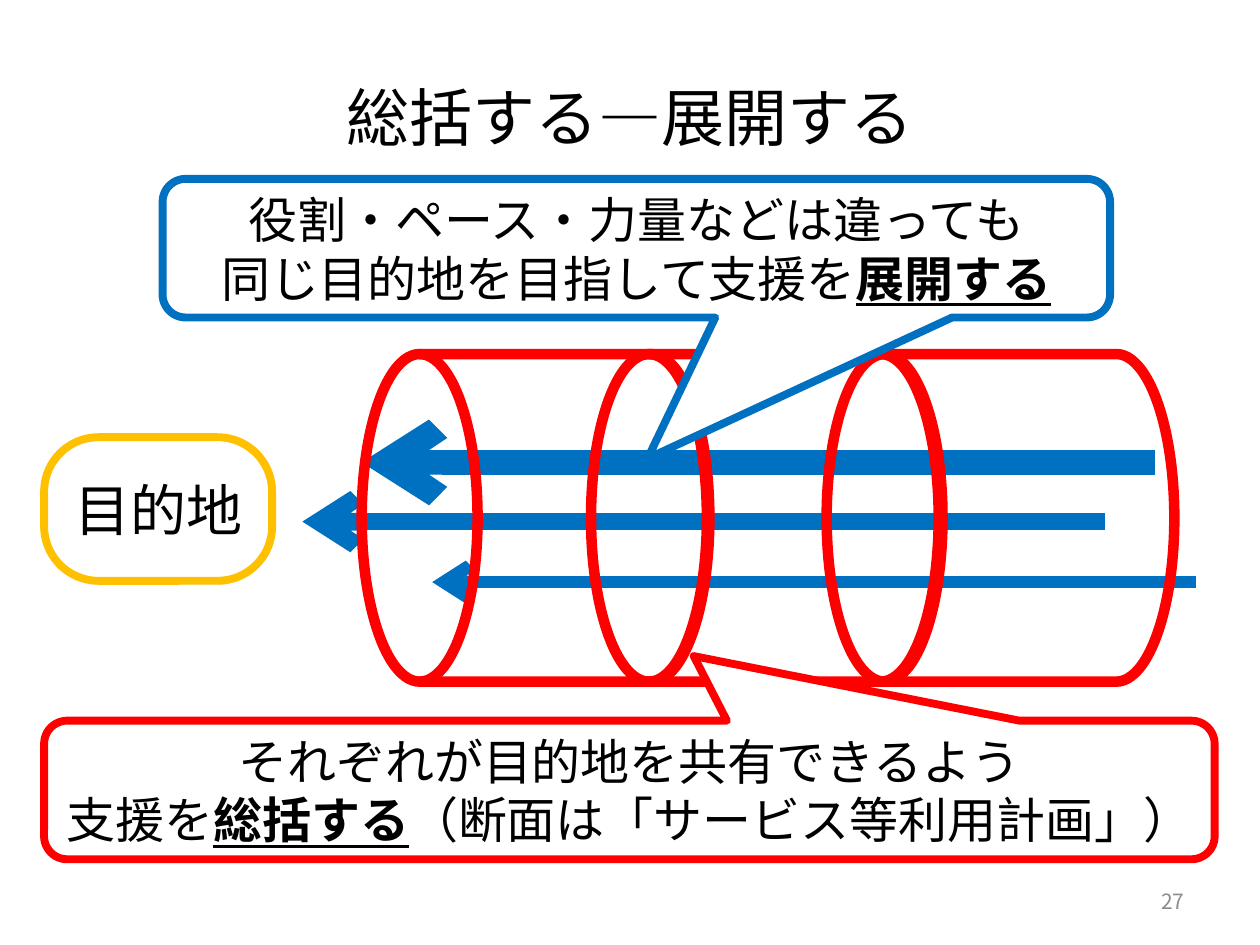
from lxml.etree import SubElement
from pptx import Presentation
from pptx.dml.color import RGBColor
from pptx.enum.shapes import MSO_CONNECTOR, MSO_SHAPE
from pptx.enum.text import MSO_ANCHOR, PP_ALIGN
from pptx.oxml.ns import qn
from pptx.util import Inches, Pt

FONT = "Noto Sans CJK JP"
RED, BLUE, GOLD, WHITE = "FF0000", "0070C0", "FFC000", "FFFFFF"

deck = Presentation()
deck.slide_width, deck.slide_height = Inches(10), Inches(7.5)
page = deck.slides.add_slide(deck.slide_layouts[5])

# Grid of 100 columns by 75 rows
column, row = deck.slide_width / 100, deck.slide_height / 75


def grid(left, top, width, height):
    return [round(n * unit) for n, unit in
            zip((left, top, width, height), (column, row, column, row))]


def write(box, *lines, size, color="000000", align=PP_ALIGN.CENTER):
    """Each line is a list of spans; every second span is bold and underlined."""
    frame = box.text_frame
    frame.word_wrap = True
    frame.vertical_anchor = MSO_ANCHOR.MIDDLE
    for number, line in enumerate(lines):
        para = frame.add_paragraph() if number else frame.paragraphs[0]
        para.alignment = align
        for position, text in enumerate(line):
            span = para.add_run()
            span.text = text
            font = span.font
            font.name, font.size = FONT, Pt(size)
            font.color.rgb = RGBColor.from_string(color)
            font.bold = font.underline = position % 2 == 1
            SubElement(span._r.get_or_add_rPr(), qn("a:ea"), typeface=FONT)


# Title
title = page.shapes.title
title.left, title.top, title.width, title.height = grid(5, 3, 90, 12.5)
write(title, ["総括する―展開する"], size=36)

# Destination
goal = page.shapes.add_shape(MSO_SHAPE.ROUNDED_RECTANGLE, *grid(3.5, 34.7, 18.1, 11.4))
goal.adjustments[0] = 0.38
write(goal, ["目的地"], size=32)

# Arrows towards the destination
for start, end, level, weight in [(91.7, 28.7, 36.7, 14),
                                  (87.7, 24, 41.4, 10),
                                  (94.9, 34.3, 46.2, 7)]:
    arrow = page.shapes.add_connector(
        MSO_CONNECTOR.STRAIGHT, *grid(start, level, end, level))
    arrow.line.color.rgb = RGBColor.from_string(BLUE)
    arrow.line.width = Pt(weight)
    SubElement(arrow.line._get_or_add_ln(), qn("a:tailEnd"), type="arrow")
    SubElement(arrow._element.spPr, qn("a:effectLst"))

# Pipe of three drums, the rightmost at the back
for left in (65.6, 46.9, 28.7):
    drum = page.shapes.add_shape(
        MSO_SHAPE.FLOWCHART_DIRECT_ACCESS_STORAGE, *grid(left, 28.1, 27.6, 26))
    drum.rotation = 180
    drum.shadow.inherit = False
    drum.fill.background()
    drum.line.color.rgb = RGBColor.from_string(RED)
    drum.line.width = Pt(6)

# Callouts
boxes = [(goal, GOLD)]
for place, pointer, color, lines in [
    ((12.9, 14.2, 75.2, 11), (0.012, 1.517), BLUE,
     [["役割・ペース・力量などは違っても"],
      ["同じ目的地を目指して支援を", "展開する"]]),
    ((3.5, 57.2, 92.9, 11), (0.055, -0.966), RED,
     [["それぞれが目的地を共有できるよう"],
      ["支援を", "総括する", "（断面は「サービス等利用計画」）"]]),
]:
    callout = page.shapes.add_shape(MSO_SHAPE.ROUNDED_RECTANGULAR_CALLOUT, *grid(*place))
    callout.adjustments[0], callout.adjustments[1] = pointer
    write(callout, *lines, size=28)
    boxes.append((callout, color))

# White boxes with coloured outlines
for box, color in boxes:
    box.shadow.inherit = False
    box.fill.solid()
    box.fill.fore_color.rgb = RGBColor.from_string(WHITE)
    box.line.color.rgb = RGBColor.from_string(color)
    box.line.width = Pt(4.5)

# Page number
page_number = page.shapes.add_textbox(*grid(71.7, 69.5, 23.3, 4))
write(page_number, ["27"], size=12, color="8C8C8C", align=PP_ALIGN.RIGHT)

deck.save("out.pptx")
